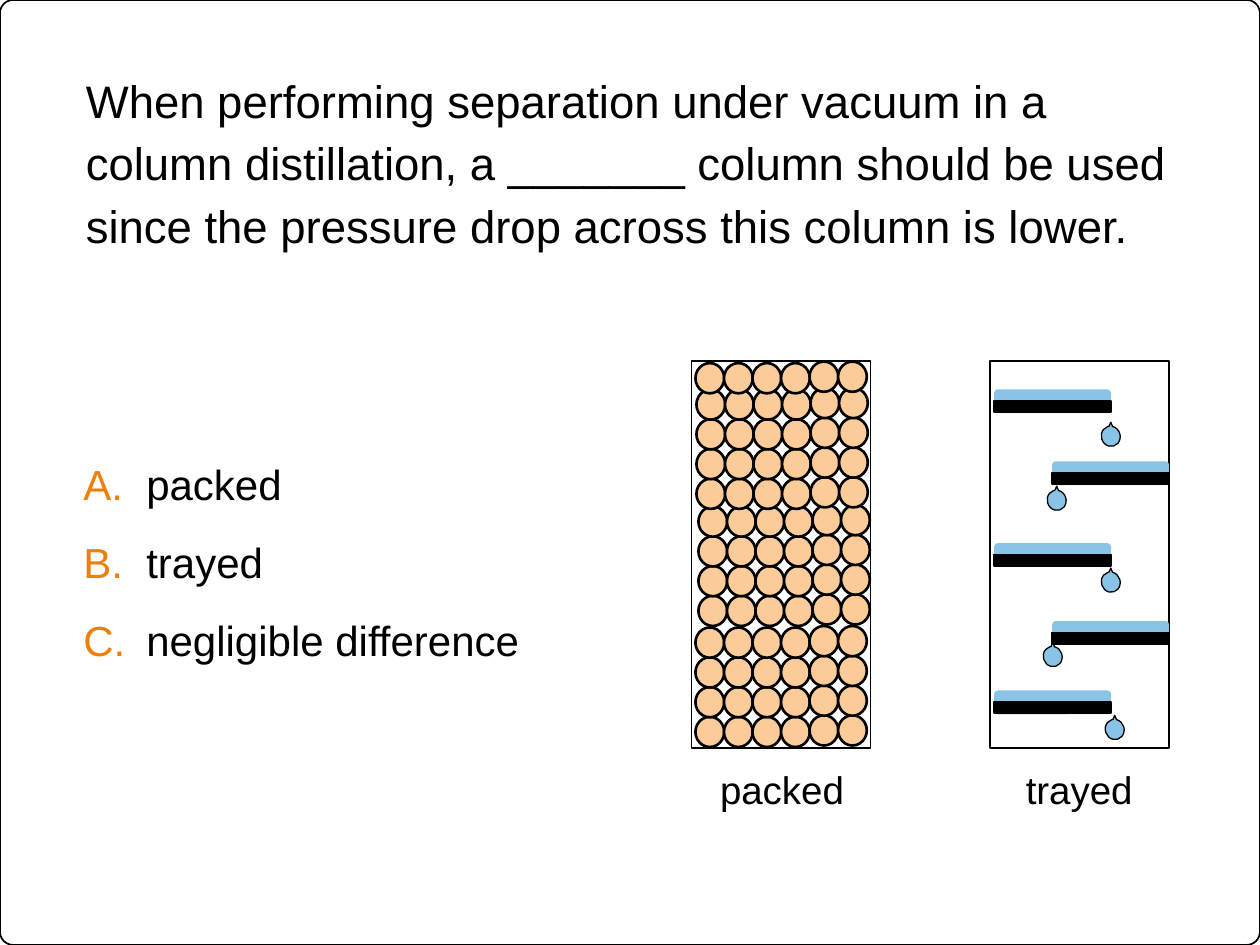
from lxml.etree import SubElement
from pptx import Presentation
from pptx.dml.color import RGBColor
from pptx.enum.shapes import MSO_SHAPE
from pptx.enum.text import MSO_ANCHOR, MSO_AUTO_SIZE, PP_ALIGN
from pptx.oxml.ns import qn
from pptx.util import Cm, Pt

BLACK, ORANGE, PEACH, WATER = "000000", "F07F09", "FBCC9A", "89C3E5"


def draw(kind, left, top, width, height, fill=None, line=None):
    """Add a preset shape, with lengths in cm and the line width in points."""
    shape = page.shapes.add_shape(kind, Cm(left), Cm(top), Cm(width), Cm(height))
    shape.shadow.inherit = False
    if fill:
        shape.fill.solid()
        shape.fill.fore_color.rgb = RGBColor.from_string(fill)
    else:
        shape.fill.background()
    if line:
        shape.line.color.rgb = RGBColor.from_string(BLACK)
        shape.line.width = Pt(line)
    else:
        shape.line.fill.background()
    return shape


def write(box, lines, size, spacing=1.0, align=PP_ALIGN.LEFT, margin=0, lettered=False):
    """Fill a box with one paragraph a line, lettered A., B., C. on request."""
    frame = box.text_frame
    frame_format = {
        "word_wrap": True, "auto_size": MSO_AUTO_SIZE.NONE,
        "vertical_anchor": MSO_ANCHOR.TOP,
        "margin_left": Cm(margin), "margin_right": Cm(margin),
        "margin_top": Cm(margin / 2), "margin_bottom": Cm(margin / 2),
    }
    for name, value in frame_format.items():
        setattr(frame, name, value)
    frame.text = "\n".join(lines)
    for para in frame.paragraphs:
        para.alignment, para.line_spacing = align, spacing
        if lettered:
            properties = para._p.get_or_add_pPr()
            properties.set("marL", str(Cm(1.27)))
            properties.set("indent", str(Cm(-1.27)))
            colour = SubElement(properties, qn("a:buClr"))
            SubElement(colour, qn("a:srgbClr"), val=ORANGE)
            SubElement(properties, qn("a:buFont"), typeface="Arial")
            SubElement(properties, qn("a:buAutoNum"), type="alphaUcPeriod")
        for span in para.runs:
            for name, value in {"name": "Arial", "size": Pt(size)}.items():
                setattr(span.font, name, value)
            span.font.color.rgb = RGBColor.from_string(BLACK)


deck = Presentation()
deck.slide_width, deck.slide_height = Cm(25.4), Cm(19.05)
page = deck.slides.add_slide(deck.slide_layouts[5])

border = draw(MSO_SHAPE.ROUNDED_RECTANGLE, 0, 0, 25.4, 19.05, line=1)
border.adjustments[0] = 0.014

# Question and answers
question = page.shapes.title
place = {"left": 1.73, "top": 1.3, "width": 22.33, "height": 6.35}
for name, value in place.items():
    setattr(question, name, Cm(value))
write(question, ["When performing separation under vacuum in a column distillation, "
                 "a _______ column should be used since the pressure drop across "
                 "this column is lower."], 26, spacing=1.15)

answers = page.shapes.add_textbox(Cm(1.68), Cm(8.69), Cm(10.44), Cm(5.92))
write(answers, ["packed", "trayed", "negligible difference"], 24, spacing=1.55,
      lettered=True)

# Packed column: blocks of (left, top of lowest row, rows), stacked upwards
for left, lowest, rows in [(14.02, 14.45, 4), (14.08, 12.01, 4),
                           (14.04, 9.65, 4), (14.02, 7.32, 1)]:
    for row in range(rows):
        for column in range(6):
            lift = 0.03 if column > 3 else 0
            draw(MSO_SHAPE.OVAL, left + 0.575 * column, lowest - 0.6 * row - lift,
                 0.58, 0.61, PEACH, 1.5)

# Column walls and captions
for wall_left, caption_left, caption in [(13.94, 13.67, "packed"),
                                         (19.96, 19.66, "trayed")]:
    draw(MSO_SHAPE.RECTANGLE, wall_left, 7.28, 3.61, 7.8, line=1)
    label = page.shapes.add_textbox(Cm(caption_left), Cm(15.32), Cm(4.19), Cm(1.22))
    write(label, [caption], 22, align=PP_ALIGN.CENTER, margin=0.25)

# Trayed column: (tray left, water top, drop left, drop top)
trays = [(20.04, 7.85, 22.2, 8.59), (21.21, 9.3, 21.11, 9.88),
         (20.04, 10.95, 22.2, 11.53), (21.21, 12.52, 21.03, 13.03),
         (20.04, 13.92, 22.28, 14.5)]
for tray_left, water_top, drop_left, drop_top in trays:
    draw(MSO_SHAPE.ROUNDED_RECTANGLE, tray_left, water_top, 2.36, 0.48, WATER)
    draw(MSO_SHAPE.RECTANGLE, tray_left, water_top + 0.23, 2.36, 0.23, BLACK, 1)
    drop = draw(MSO_SHAPE.OVAL_CALLOUT, drop_left, drop_top, 0.38, 0.41, WATER, 0.75)
    drop.rotation = 162.2
    drop.adjustments[0], drop.adjustments[1] = -0.23, 0.66

deck.save("out.pptx")
